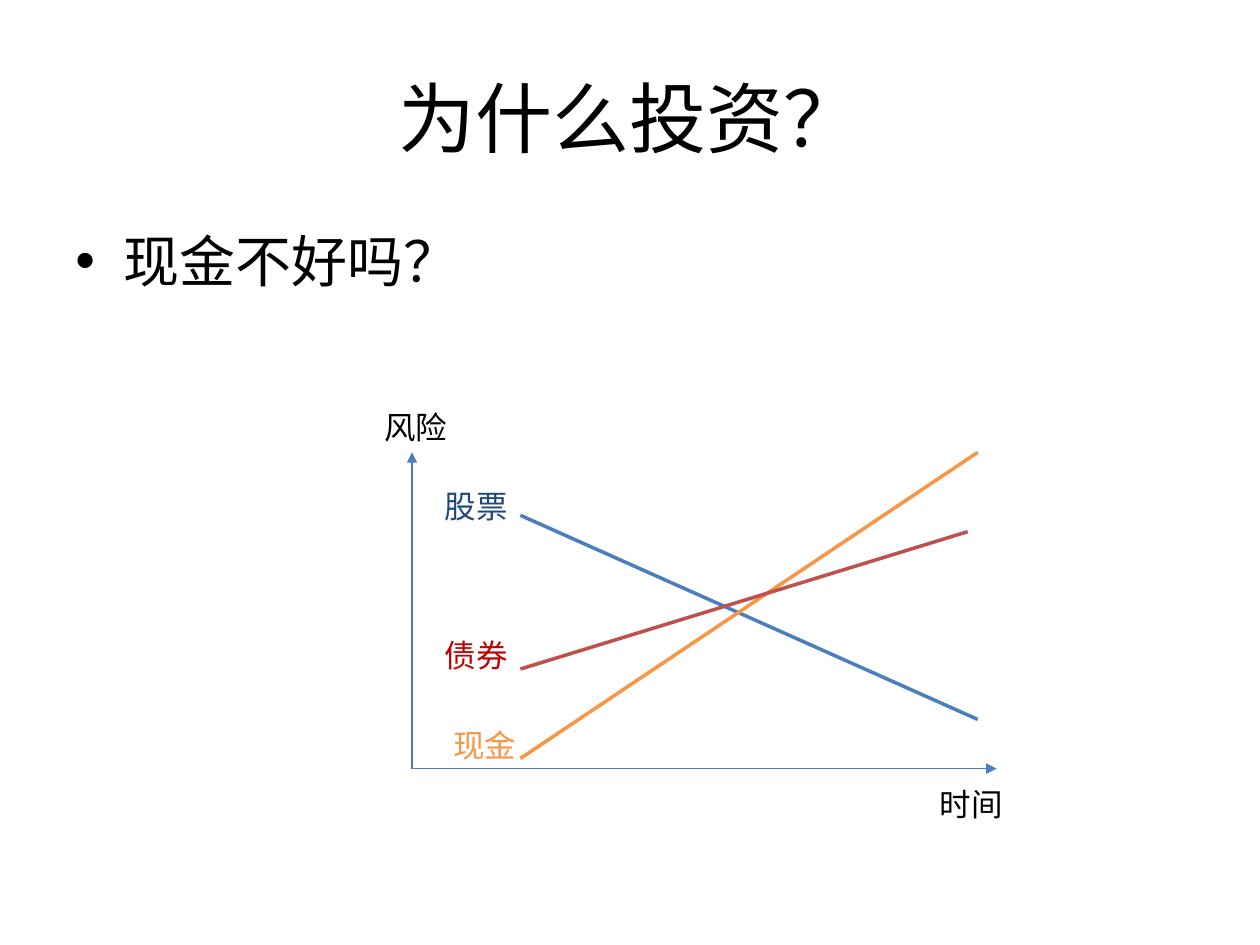
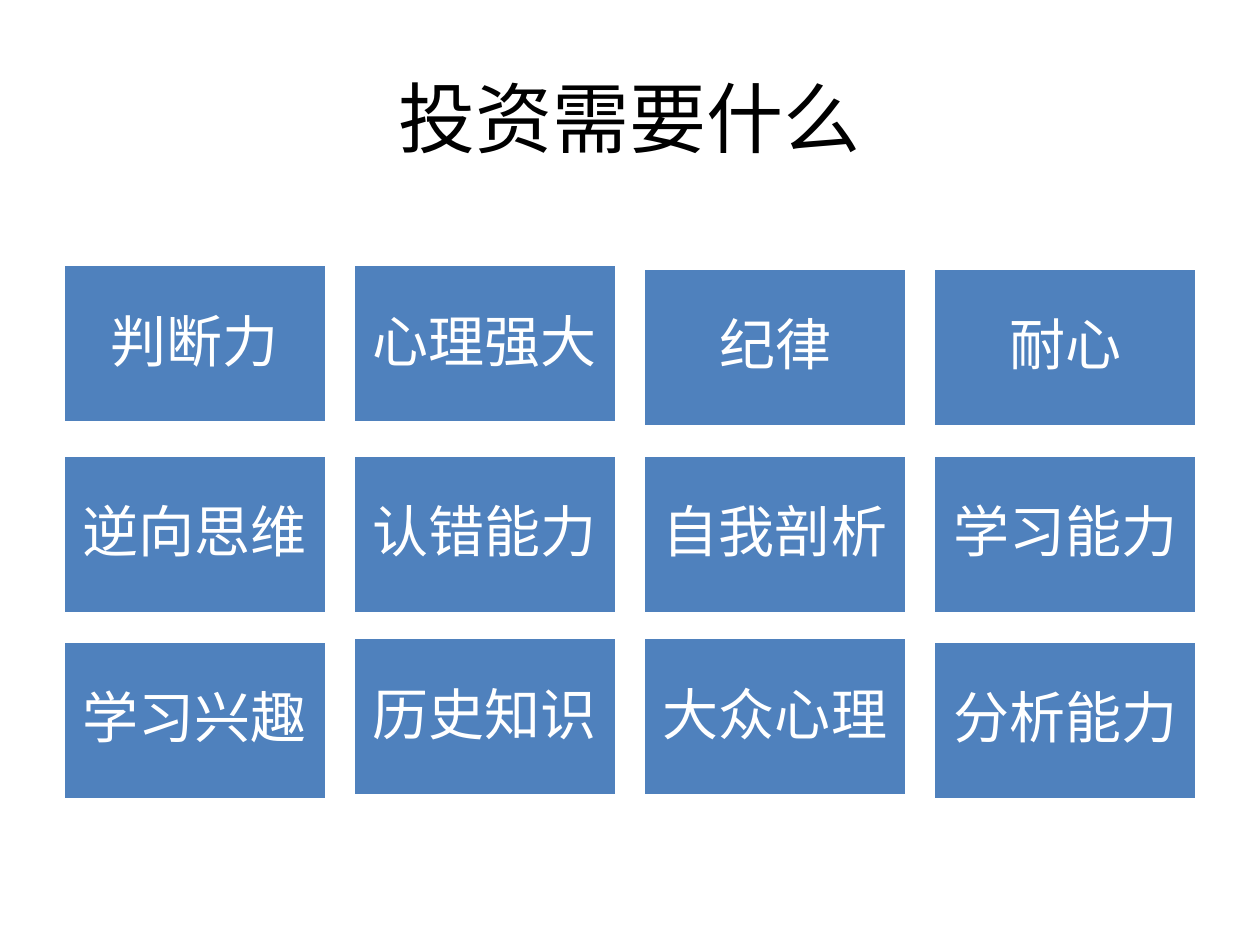
from collections import namedtuple
from dataclasses import dataclass

from lxml import etree
from pptx import Presentation
from pptx.dml.color import RGBColor
from pptx.enum.shapes import MSO_CONNECTOR, MSO_SHAPE
from pptx.enum.text import MSO_ANCHOR, PP_ALIGN
from pptx.oxml.ns import qn
from pptx.util import Inches, Pt

STRAIGHT = MSO_CONNECTOR.STRAIGHT
RECTANGLE = MSO_SHAPE.RECTANGLE
TOP, MIDDLE = MSO_ANCHOR.TOP, MSO_ANCHOR.MIDDLE
LEFT, CENTER = PP_ALIGN.LEFT, PP_ALIGN.CENTER

# The slide is a grid of 100 columns by 75 rows
COLUMNS, ROWS = 100, 75
UNIT = Inches(10) / COLUMNS

Box = namedtuple("Box", "left top width height")
Series = namedtuple("Series", "name start end line_color label label_color")


@dataclass(frozen=True)
class Theme:
    font: str = "Calibri"
    title_size: int = 44
    body_size: int = 32
    label_size: int = 18
    axis_width: float = 0.75
    series_width: float = 2
    text: str = "000000"
    white: str = "FFFFFF"
    card: str = "4F81BD"
    blue: str = "4B7EBC"
    navy: str = "1F497D"
    orange: str = "F79646"
    red: str = "C0504D"
    dark_red: str = "C00000"


THEME = Theme()
TITLE_BOX = Box(5, 3, 90, 12.5)
BODY_BOX = Box(5, 17.5, 90, 49.5)
PLOT_BOX = Box(32.7, 35.9, 46.4, 25.1)
CARDS_BOX = Box(5, 21.3, 90, 42.2)
CARD_WIDTH, CARD_HEIGHT, CARD_LIFT = 20.9, 12.6, 0.3
CARD_INSET = 1.3

# Points and label boxes are grid units from the plot's top left corner
RISK_SERIES = [
    Series("股票", (8.6, 5), (44.9, 21.2), THEME.blue, Box(1.6, 2.3, 7.1, 4), THEME.navy),
    Series("现金", (8.6, 24.3), (44.9, 0), THEME.orange, Box(2.3, 21.2, 8.7, 4), THEME.orange),
    Series("债券", (8.6, 17.2), (44.1, 6.3), THEME.red, Box(1.6, 14.1, 7.1, 4), THEME.dark_red),
]
AXIS_LABELS = [("风险", Box(-3.2, -4, 9.4, 4)), ("时间", Box(40.9, 25.9, 7.1, 4))]

SKILLS = [
    ["判断力", "心理强大", "纪律", "耐心"],
    ["逆向思维", "认错能力", "自我剖析", "学习能力"],
    ["学习兴趣", "历史知识", "大众心理", "分析能力"],
]
LIFTED_SKILLS = {"判断力", "心理强大", "历史知识", "大众心理"}


def grid(*values):
    return [round(value * UNIT) for value in values]


def within(outer, inner):
    return Box(outer.left + inner.left, outer.top + inner.top, inner.width, inner.height)


def set_attributes(target, formats):
    for name, value in formats.items():
        setattr(target, name, value)


def write(shape, text, size, color, align=LEFT, anchor=TOP, bullet=None, spacing=None):
    set_attributes(shape.text_frame, {"word_wrap": True, "vertical_anchor": anchor})
    paragraph = shape.text_frame.paragraphs[0]
    paragraph.text = text
    set_attributes(paragraph, {"alignment": align, "line_spacing": spacing})
    if bullet:
        properties = paragraph._p.get_or_add_pPr()
        indent = Inches(0.38)
        properties.set("marL", str(indent))
        properties.set("indent", str(-indent))
        etree.SubElement(properties, qn("a:buFont")).set("typeface", "Arial")
        etree.SubElement(properties, qn("a:buChar")).set("char", bullet)
    font = paragraph.runs[0].font
    set_attributes(font, {"name": THEME.font, "size": Pt(size)})
    font.color.rgb = RGBColor.from_string(color)


def add_text(slide, box, text, size, color=THEME.text, **formats):
    write(slide.shapes.add_textbox(*grid(*box)), text, size, color, **formats)


def add_line(slide, box, start, end, color, width, arrow=False):
    points = [box.left + start[0], box.top + start[1], box.left + end[0], box.top + end[1]]
    connector = slide.shapes.add_connector(STRAIGHT, *grid(*points))
    connector.line.color.rgb = RGBColor.from_string(color)
    connector.line.width = Pt(width)
    if arrow:
        outline = connector.line._get_or_add_ln()
        etree.SubElement(outline, qn("a:tailEnd")).set("type", "triangle")
    etree.SubElement(connector._element.spPr, qn("a:effectLst"))


def add_titled_slide(presentation, title):
    slide = presentation.slides.add_slide(presentation.slide_layouts[6])
    add_text(slide, TITLE_BOX, title, THEME.title_size, align=CENTER, anchor=MIDDLE)
    return slide


def draw_risk_plot(slide, box):
    # Axes leave the bottom left corner
    origin = (0, box.height)
    for end in [(box.width, box.height), (0, 0)]:
        add_line(slide, box, origin, end, THEME.blue, THEME.axis_width, arrow=True)
    for name, label in AXIS_LABELS:
        add_text(slide, within(box, label), name, THEME.label_size)

    # One line and one name for each asset
    for series in RISK_SERIES:
        add_line(slide, box, series.start, series.end, series.line_color, THEME.series_width)
        add_text(slide, within(box, series.label), series.name, THEME.label_size,
                 series.label_color)


def add_card(slide, box, text):
    card = slide.shapes.add_shape(RECTANGLE, *grid(*box))
    card.shadow.inherit = False
    card.fill.solid()
    card.fill.fore_color.rgb = RGBColor.from_string(THEME.card)
    card.line.color.rgb = RGBColor.from_string(THEME.white)
    card.line.width = Pt(2)
    inset = grid(CARD_INSET)[0]
    sides = ("margin_left", "margin_top", "margin_right", "margin_bottom")
    set_attributes(card.text_frame, dict.fromkeys(sides, inset))
    write(card, text, THEME.body_size, THEME.white, align=CENTER, anchor=MIDDLE, spacing=0.9)


def draw_skill_cards(slide, box):
    # Equal gaps fill the box; lifted cards sit slightly higher
    column_step = (box.width - CARD_WIDTH) / (len(SKILLS[0]) - 1)
    row_step = (box.height - CARD_HEIGHT) / (len(SKILLS) - 1)
    for row, names in enumerate(SKILLS):
        for column, name in enumerate(names):
            lift = CARD_LIFT if name in LIFTED_SKILLS else 0
            place = Box(column * column_step, row * row_step - lift, CARD_WIDTH, CARD_HEIGHT)
            add_card(slide, within(box, place), name)


def build_why_slide(presentation):
    slide = add_titled_slide(presentation, "为什么投资？")
    add_text(slide, BODY_BOX, "现金不好吗？", THEME.body_size, bullet="•")
    draw_risk_plot(slide, PLOT_BOX)


def build_skills_slide(presentation):
    slide = add_titled_slide(presentation, "投资需要什么")
    draw_skill_cards(slide, CARDS_BOX)


def main():
    presentation = Presentation()
    width, height = grid(COLUMNS, ROWS)
    set_attributes(presentation, {"slide_width": width, "slide_height": height})
    build_why_slide(presentation)
    build_skills_slide(presentation)
    presentation.save("out.pptx")


if __name__ == "__main__":
    main()
